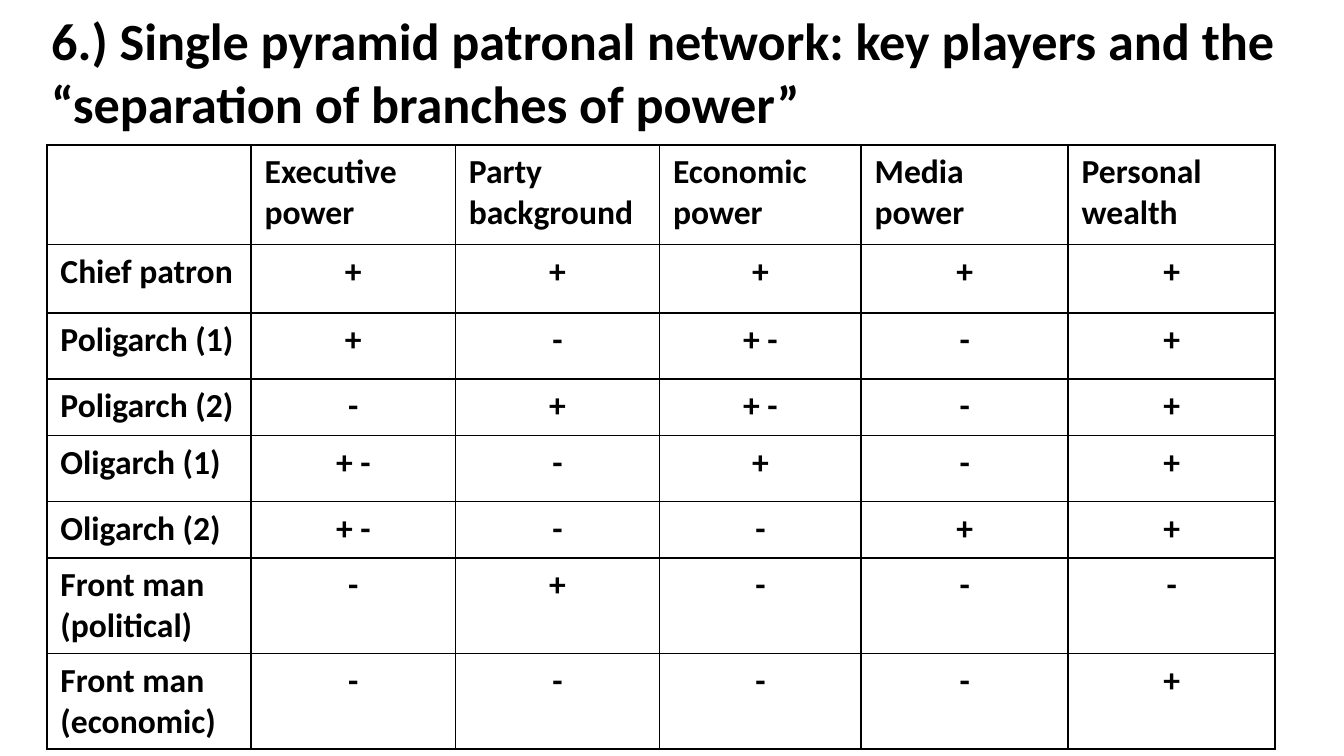
from lxml import etree
from pptx import Presentation
from pptx.dml.color import RGBColor
from pptx.enum.text import MSO_ANCHOR, PP_ALIGN
from pptx.oxml.ns import qn
from pptx.util import Pt

LEFT, CENTER = PP_ALIGN.LEFT, PP_ALIGN.CENTER
MIDDLE = MSO_ANCHOR.MIDDLE
BLACK = RGBColor(0x00, 0x00, 0x00)
WHITE = RGBColor(0xFF, 0xFF, 0xFF)

TITLE = ("6.) Single pyramid patronal network: key players and the "
         "“separation of branches of power”")
POWERS = ["", "Executive power", "Party background", "Economic power",
          "Media power", "Personal wealth"]
PLAYERS = [
    ["Chief patron", "+", "+", "+", "+", "+"],
    ["Poligarch (1)", "+", "-", "+ -", "-", "+"],
    ["Poligarch (2)", "-", "+", "+ -", "-", "+"],
    ["Oligarch (1)", "+ -", "-", "+", "-", "+"],
    ["Oligarch (2)", "+ -", "-", "-", "+", "+"],
    ["Front man (political)", "-", "+", "-", "-", "-"],
    ["Front man (economic)", "-", "-", "-", "-", "+"],
]
COLUMN_WIDTHS = [109.4, 109.4, 109.4, 108, 110.9, 110.9]
ROW_HEIGHTS = [53.2, 36.6, 35.6, 30.2, 35.4, 30.2, 47.5, 47.5]


class PageBuilder:
    font_name = "Calibri"
    title_size = 28
    cell_size = 18
    border_width = 1

    def __init__(self, page):
        self.page = page

    def style(self, para, size, align):
        para.alignment = align
        para.font.name = self.font_name
        para.font.size = Pt(size)
        para.font.bold = True
        para.font.color.rgb = BLACK

    def title(self, text, left, top, width, height):
        box = self.page.shapes.title
        box.left, box.top = Pt(left), Pt(top)
        box.width, box.height = Pt(width), Pt(height)
        box.text_frame.text = text
        box.text_frame.vertical_anchor = MIDDLE
        self.style(box.text_frame.paragraphs[0], self.title_size, LEFT)

    def borders(self, cell):
        properties = cell._tc.get_or_add_tcPr()
        for side in ("lnL", "lnR", "lnT", "lnB"):
            line = etree.SubElement(properties, qn(f"a:{side}"),
                                    w=str(Pt(self.border_width)))
            fill = etree.SubElement(line, qn("a:solidFill"))
            etree.SubElement(fill, qn("a:srgbClr"), val=str(BLACK))

    def cell(self, cell, text, align):
        self.borders(cell)
        cell.fill.solid()
        cell.fill.fore_color.rgb = WHITE
        cell.text = text
        self.style(cell.text_frame.paragraphs[0], self.cell_size, align)

    def table(self, rows, left, top, widths, heights):
        frame = self.page.shapes.add_table(
            len(rows), len(widths), Pt(left), Pt(top),
            Pt(sum(widths)), Pt(sum(heights)))
        table = frame.table
        for column, width in zip(table.columns, widths):
            column.width = Pt(width)
        for row, height in zip(table.rows, heights):
            row.height = Pt(height)
        for r, texts in enumerate(rows):
            for c, text in enumerate(texts):
                align = CENTER if r and c else LEFT
                self.cell(table.cell(r, c), text, align)


def main():
    deck = Presentation()
    deck.slide_width, deck.slide_height = Pt(720), Pt(405)
    builder = PageBuilder(deck.slides.add_slide(deck.slide_layouts[5]))
    builder.title(TITLE, 20.2, 4.3, 680.4, 67.7)
    builder.table([POWERS] + PLAYERS, 25.2, 77.8, COLUMN_WIDTHS, ROW_HEIGHTS)
    deck.save("out.pptx")


if __name__ == "__main__":
    main()
